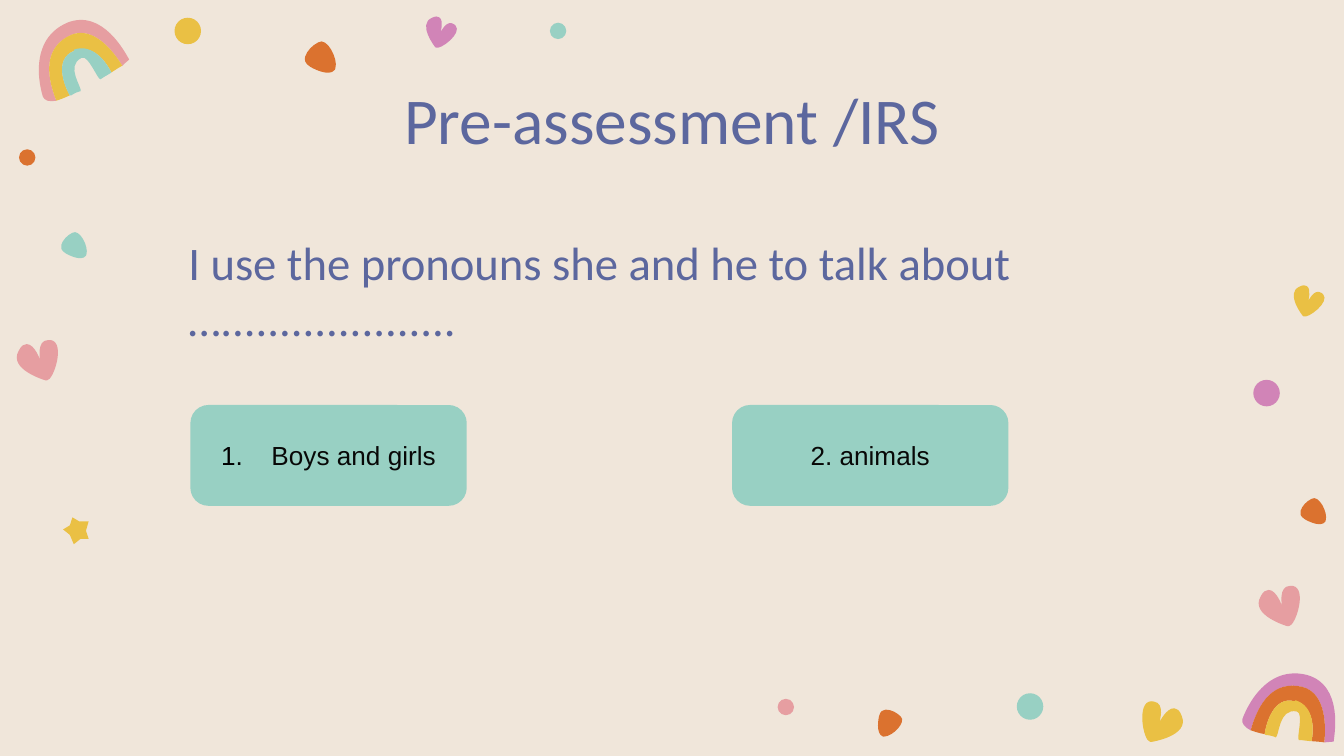
from math import cos, radians, sin

from lxml.etree import SubElement
from pptx import Presentation
from pptx.dml.color import RGBColor
from pptx.enum.shapes import MSO_SHAPE
from pptx.enum.text import MSO_ANCHOR, MSO_AUTO_SIZE, PP_ALIGN
from pptx.oxml.ns import qn
from pptx.util import Pt

CREAM, INK, TEXT = "F0E6DA", "5C679E", "080807"
TEAL, YELLOW, ORANGE, PINK, PURPLE = "98D0C3", "EAC044", "DB722F", "E69EA1", "D184B7"

TITLE = "Pre-assessment /IRS"
QUESTION = "I use the pronouns she and he to talk about …...................."
ANSWERS = [("Boys and girls", True), ("2. animals", False)]
ANSWER_LEFT, ANSWER_STEP = 103, 290.2

UNIT = 0.72
OUTLINES = {
    "pebble": [(-4, -10), (-6, -10, -8, -9, -9, -5), (-9, -5, -12, 8, -6, 10),
               (-5, 10), (1, 10, 12, -1, 7, -5), (4, -8, 0, -10, -4, -10)],
    "heart": [(9, -15), (0, -15, 3, 0, 3, 0), (3, 0, -1, -12, -7, -12),
              (-9, -12, -11, -11, -13, -7), (-21, 7, 7, 15, 7, 15), (8, 15),
              (13, 15, 22, -13, 11, -15), (9, -15)],
    "star": [(-3, -10), (-5, -4), (-10, -1), (-5, 3), (-2, 10),
             (3, 6), (9, 6), (7, 0), (9, -7), (2, -7)],
    "outer band": [(-6, -24), (-38, -10, -24, 31, -24, 31), (-23, 34, -19, 35, -14, 34),
                   (-22, 14, -23, -6, -3, -15), (14, -22, 29, -2, 35, 8),
                   (38, 5, 41, 3, 40, 3), (38, 0, 21, -35, -6, -24)],
    "middle band": [(-3, -15), (-23, -6, -22, 14, -14, 34), (-11, 33, -8, 32, -4, 30),
                    (-8, 23, -16, 3, -1, -3), (13, -9, 23, 5, 27, 13),
                    (30, 11, 33, 9, 35, 8), (29, -2, 14, -22, -3, -15)],
    "inner band": [(-1, -3), (-16, 3, -8, 23, -4, 30), (-3, 30), (0, 28, 3, 27, 4, 27),
                   (6, 25, -8, 8, 5, 2), (10, 0, 17, 19, 19, 18),
                   (20, 17, 24, 15, 27, 13), (23, 5, 13, -9, -1, -4)],
}

DOTS = [
    (14.6, 84.4, 8.8, ORANGE), (299, 16.6, 8.8, TEAL), (421, 378.8, 8.8, PINK),
    (100.6, 16.6, 14.2, YELLOW), (551.8, 378.5, 14.2, TEAL), (678.5, 210.6, 14.2, PURPLE),
]
MOTIFS = [
    ("pebble", 477.4, 387.4, ORANGE, {}),
    ("pebble", 40.6, 130.7, TEAL, {"angle": 288}),
    ("pebble", 172.8, 29.8, ORANGE, {"angle": 288, "scale": 1.2}),
    ("pebble", 704.5, 273.2, ORANGE, {"angle": 288}),
    ("heart", 19.4, 193, PINK, {}),
    ("heart", 684.7, 324.7, PINK, {}),
    ("heart", 623.2, 387.4, YELLOW, {"angle": 7.4, "mirror": True}),
    ("heart", 234.7, 16.6, PURPLE, {"angle": 35.6, "scale": 0.73}),
    ("heart", 699.5, 160.6, YELLOW, {"angle": 35.6, "scale": 0.73}),
    ("star", 41, 284.4, YELLOW, {}),
]
RAINBOWS = [
    (40.3, 29.5, 0, (PINK, YELLOW, TEAL)),
    (692.9, 377.9, 37.3, (PURPLE, ORANGE, YELLOW)),
]


def color(code):
    """Turn a hex string into a colour."""
    return RGBColor.from_string(code)


def paint(shape, fill, line=None):
    """Give a shape a flat fill and an optional two-point line."""
    shape.shadow.inherit = False
    shape.fill.solid()
    shape.fill.fore_color.rgb = color(fill)
    if line:
        shape.line.color.rgb = color(line)
        shape.line.width = Pt(2)
    else:
        shape.line.fill.background()


def move_to_master(shape, master):
    """Move a decoration from the slide to its master under a fresh id."""
    tree = master.shapes._spTree
    shape._element.nvSpPr.cNvPr.set("id", str(100 + len(tree)))
    tree.append(shape._element)


def bend(shape, outline):
    """Turn each three lines drawn for a cubic segment into one curve."""
    track = shape._element.find(".//" + qn("a:path"))
    lines = iter(track.findall(qn("a:lnTo")))
    for segment in outline[1:]:
        first = next(lines)
        if len(segment) == 6:
            first.tag = qn("a:cubicBezTo")
            for line in (next(lines), next(lines)):
                first.append(line[0])
                track.remove(line)


def add_motif(page, name, x, y, fill, angle=0, scale=1, mirror=False):
    """Draw a named outline turned and scaled about its centre."""
    across = UNIT * scale * cos(radians(angle))
    down = UNIT * scale * sin(radians(angle))
    side = -1 if mirror else 1
    outline = OUTLINES[name]
    points = [(Pt(x + side * px * across - py * down), Pt(y + side * px * down + py * across))
              for segment in outline for px, py in zip(segment[::2], segment[1::2])]
    builder = page.shapes.build_freeform(*points[0])
    builder.add_line_segments(points[1:], close=True)
    shape = builder.convert_to_shape()
    bend(shape, outline)
    paint(shape, fill)
    return shape


def write(box, text, size, font, fill, align=PP_ALIGN.LEFT, anchor=MSO_ANCHOR.MIDDLE, inset=7.2):
    """Put one formatted paragraph in a box and return it."""
    frame = box.text_frame
    frame.word_wrap = True
    frame.auto_size = MSO_AUTO_SIZE.NONE
    frame.vertical_anchor = anchor
    frame.margin_left = frame.margin_right = Pt(7.2)
    frame.margin_top = frame.margin_bottom = Pt(inset)
    para = frame.paragraphs[0]
    para.alignment = align
    span = para.add_run()
    span.text = text
    span.font.size = Pt(size)
    span.font.name = font
    span.font.color.rgb = color(fill)
    return para


def number(para):
    """Number a paragraph with a hanging indent."""
    props = para._p.get_or_add_pPr()
    props.set("marL", str(Pt(27)))
    props.set("indent", str(-Pt(27)))
    tint = SubElement(props, qn("a:buClr"))
    SubElement(tint, qn("a:srgbClr"), val="000000")
    SubElement(props, qn("a:buFont"), typeface="Arial")
    SubElement(props, qn("a:buAutoNum"), type="arabicPeriod")


def decorate(page, master):
    """Place the dots, motifs and rainbows on the master."""
    shapes = []
    for x, y, size, fill in DOTS:
        corner = Pt(x - size / 2), Pt(y - size / 2)
        dot = page.shapes.add_shape(MSO_SHAPE.OVAL, *corner, Pt(size), Pt(size))
        paint(dot, fill)
        shapes.append(dot)
    for name, x, y, fill, options in MOTIFS:
        shapes.append(add_motif(page, name, x, y, fill, **options))
    for x, y, angle, fills in RAINBOWS:
        for band, fill in zip(("outer", "middle", "inner"), fills):
            shapes.append(add_motif(page, f"{band} band", x, y, fill, angle=angle))
    for shape in shapes:
        move_to_master(shape, master)


def main():
    """Build the slide and save it."""
    deck = Presentation()
    deck.slide_width, deck.slide_height = Pt(720), Pt(405)
    page = deck.slides.add_slide(deck.slide_layouts[5])
    page.background.fill.solid()
    page.background.fill.fore_color.rgb = color(CREAM)
    decorate(page, deck.slide_master)

    title = page.shapes.title
    title.left, title.top, title.width, title.height = Pt(56.6), Pt(35.3), Pt(607), Pt(45.4)
    write(title, TITLE, 35, "Calibri", INK, align=PP_ALIGN.CENTER, anchor=MSO_ANCHOR.TOP)

    question = page.shapes.add_textbox(Pt(93.8), Pt(141.1), Pt(472.3), Pt(28))
    write(question, QUESTION, 25, "Calibri", INK)

    for index, (answer, numbered) in enumerate(ANSWERS):
        left = ANSWER_LEFT + index * ANSWER_STEP
        box = page.shapes.add_shape(
            MSO_SHAPE.ROUNDED_RECTANGLE, Pt(left), Pt(218), Pt(146), Pt(52))
        paint(box, TEAL, line=TEAL)
        para = write(box, answer, 14, "Arial", TEXT, align=PP_ALIGN.CENTER, inset=3.6)
        if numbered:
            number(para)

    deck.save("out.pptx")


if __name__ == "__main__":
    main()
